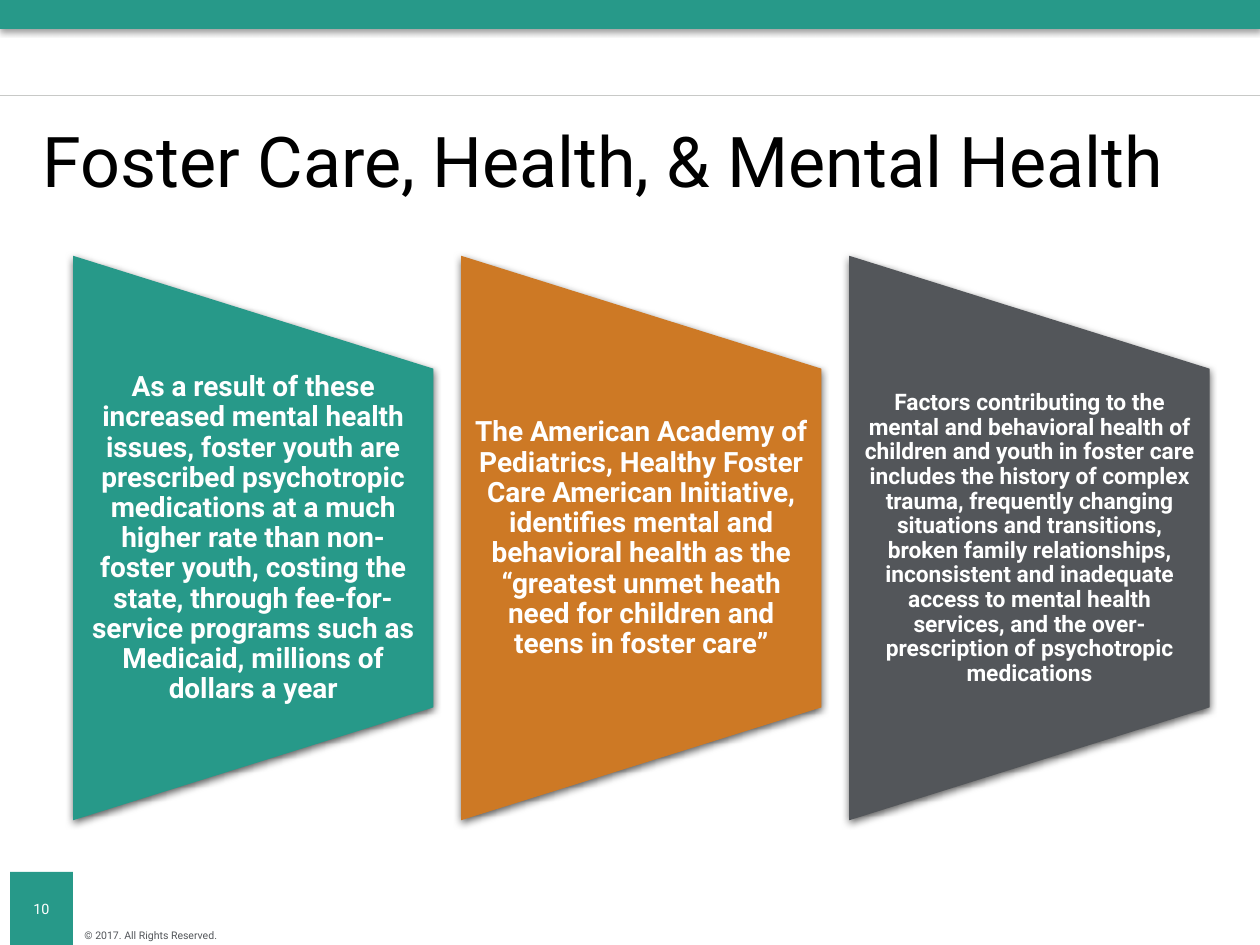
import pptx
import pptx.util
import pptx.dml.color
import pptx.enum.shapes
import pptx.enum.text
import pptx.oxml
import pptx.oxml.ns

Inches = pptx.util.Inches
Pt = pptx.util.Pt
Kind = pptx.enum.shapes.MSO_SHAPE
Align = pptx.enum.text.PP_ALIGN

COLORS = {
    "teal": "279989",
    "orange": "CD7925",
    "slate": "53565A",
    "rule": "C8C9C7",
    "white": "FFFFFF",
    "black": "000000",
}

CARDS = [
    ("teal", 16, 0.11,
     "As a result of these increased mental health issues, foster youth are "
     "prescribed psychotropic medications at a much higher rate than "
     "non-foster youth, costing the state, through fee-for-service programs "
     "such as Medicaid, millions of dollars a year"),
    ("orange", 16, 0.11,
     "The American Academy of Pediatrics, Healthy Foster Care American "
     "Initiative, identifies mental and behavioral health as the “greatest "
     "unmet heath need for children and teens in foster care”"),
    ("slate", 13, 0.09,
     "Factors contributing to the mental and behavioral health of children "
     "and youth in foster care includes the history of complex trauma, "
     "frequently changing situations and transitions, broken family "
     "relationships, inconsistent and inadequate access to mental health "
     "services, and the over-prescription of psychotropic medications"),
]


def tint(name):
    return pptx.dml.color.RGBColor.from_string(COLORS[name])


def place(shape, left, top, width, height):
    shape.left, shape.top = Inches(left), Inches(top)
    shape.width, shape.height = Inches(width), Inches(height)


def write(shape, text, size=16, color="white", bold=False,
          align=Align.CENTER, pad=(0.1, 0.05, 0.1, 0.05), space=1.0, indent=0):
    frame = shape.text_frame
    frame.word_wrap = True
    frame.auto_size = pptx.enum.text.MSO_AUTO_SIZE.NONE
    frame.vertical_anchor = pptx.enum.text.MSO_ANCHOR.MIDDLE
    (frame.margin_left, frame.margin_top,
     frame.margin_right, frame.margin_bottom) = map(Inches, pad)
    para = frame.paragraphs[0]
    para.alignment = align
    para.line_spacing = space
    if indent:
        props = para._p.get_or_add_pPr()
        props.set("marL", str(Inches(indent)))
        props.set("indent", "0")
    run = para.add_run()
    run.text = text
    run.font.name = "Roboto"
    run.font.size = Pt(size)
    run.font.bold = bold
    run.font.color.rgb = tint(color)


def shade(shape, blur, drop, alpha):
    space = pptx.oxml.ns.nsdecls("a")
    shape._element.spPr.append(pptx.oxml.parse_xml(
        f'<a:effectLst {space}><a:outerShdw blurRad="{Pt(blur)}" '
        f'dist="{Pt(drop)}" dir="5400000" algn="ctr" rotWithShape="0">'
        f'<a:srgbClr val="{COLORS["black"]}"><a:alpha val="{alpha * 1000}"/>'
        f'</a:srgbClr></a:outerShdw></a:effectLst>'))


def block(slide, kind, color, left, top, width, height, shadow=None):
    shape = slide.shapes.add_shape(kind, 0, 0, 0, 0)
    place(shape, left, top, width, height)
    shape.fill.solid()
    shape.fill.fore_color.rgb = tint(color)
    shape.line.fill.background()
    if shadow:
        shade(shape, *shadow)
    else:
        shape.shadow.inherit = False
    return shape


def label(slide, text, left, top, width, height, **style):
    box = slide.shapes.add_textbox(0, 0, 0, 0)
    place(box, left, top, width, height)
    write(box, text, **style)


def rule(slide, top):
    line = slide.shapes.add_connector(
        pptx.enum.shapes.MSO_CONNECTOR.STRAIGHT,
        Inches(10), Inches(top), 0, Inches(top))
    line.line.color.rgb = tint("rule")
    line.line.width = Pt(0.5)
    line._element.spPr.append(pptx.oxml.parse_xml(
        f'<a:effectLst {pptx.oxml.ns.nsdecls("a")}/>'))


def card(slide, left, color, size, pad, text):
    width, height, mid = 2.86, 4.48, 4.27
    shape = block(slide, Kind.FLOWCHART_MANUAL_OPERATION, color,
                  left + (width - height) / 2, mid - width / 2,
                  height, width, shadow=(4.5, 1.5, 63))
    shape.rotation = 270
    label(slide, text, left, 2.93, width, 2.69, size=size, bold=True,
          pad=(pad, 0, pad, 0), space=0.9)


def main():
    deck = pptx.Presentation()
    deck.slide_width, deck.slide_height = Inches(10), Inches(7.5)
    slide = deck.slides.add_slide(deck.slide_layouts[5])

    rule(slide, 0.76)
    block(slide, Kind.RECTANGLE, "teal", 0, 0, 10.01, 0.23, shadow=(4, 1, 40))
    badge = block(slide, Kind.RECTANGLE, "teal", 0.08, 6.92, 0.5, 0.58)
    write(badge, "10", size=8.2, pad=(0.07, 0.04, 0.07, 0.04))
    label(slide, "© 2017. All Rights Reserved.", 0.67, 7.33, 1.48, 0.22,
          size=6, color="slate", align=Align.JUSTIFY, pad=(0, 0, 0, 0.04))

    title = slide.shapes.title
    place(title, 0.19, 0.77, 9.41, 1.08)
    write(title, "Foster Care, Health, & Mental Health", size=40,
          color="black", align=Align.LEFT, space=0.9, indent=0.05)

    for i, (color, size, pad, text) in enumerate(CARDS):
        card(slide, 0.58 + 3.08 * i, color, size, pad, text)

    deck.save("out.pptx")


if __name__ == "__main__":
    main()
